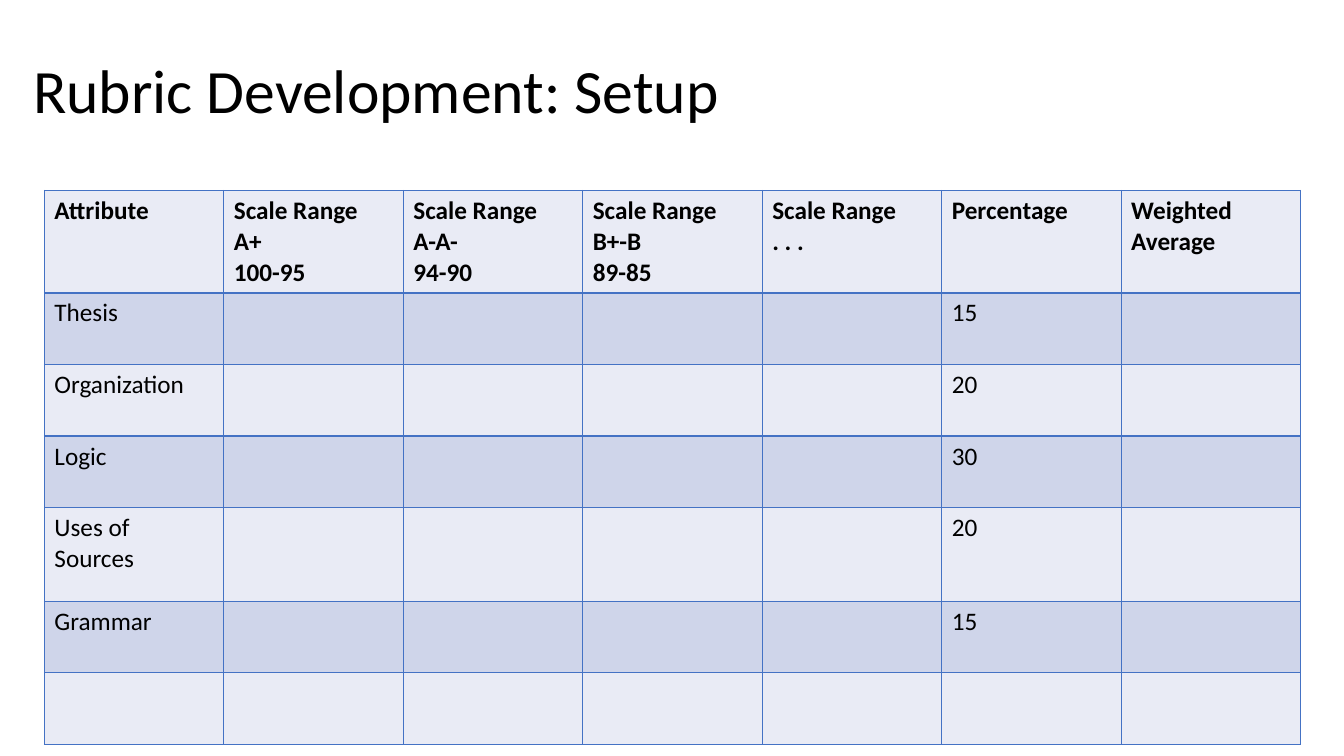
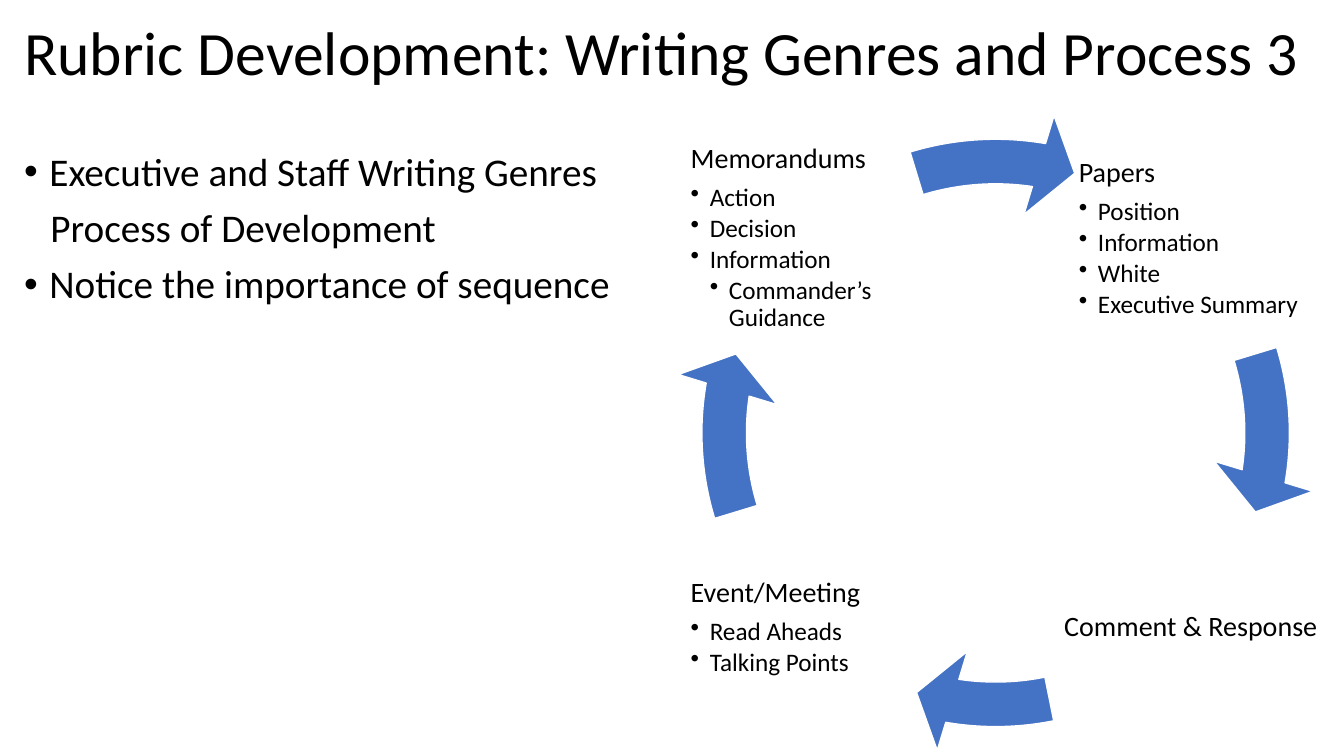
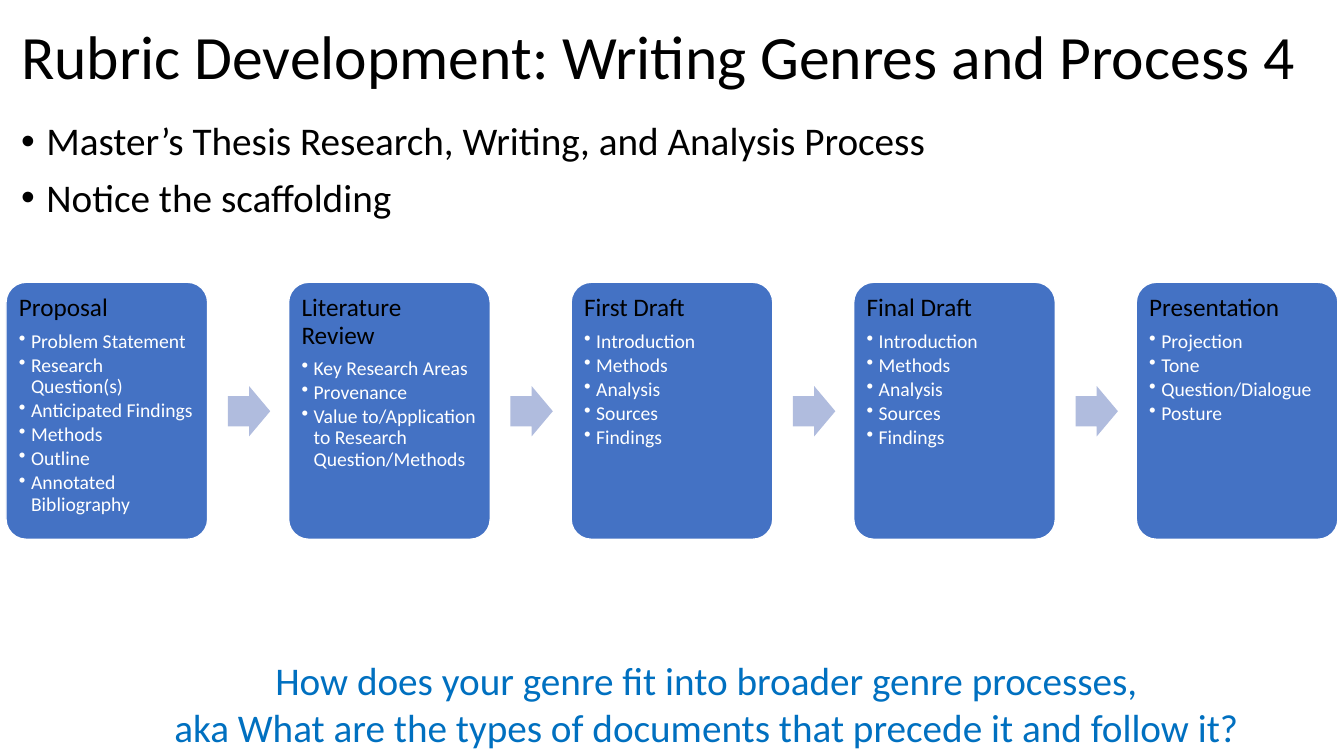
from lxml import etree
from pptx import Presentation
from pptx.dml.color import RGBColor
from pptx.enum.shapes import MSO_SHAPE
from pptx.enum.text import MSO_ANCHOR, MSO_AUTO_SIZE, PP_ALIGN
from pptx.oxml.ns import qn
from pptx.util import Inches, Pt

FONT = "Calibri"
BLACK = RGBColor(0x00, 0x00, 0x00)
WHITE = RGBColor(0xFF, 0xFF, 0xFF)
BLUE = RGBColor(0x44, 0x72, 0xC4)
PALE_BLUE = RGBColor(0xB0, 0xBC, 0xDE)
QUESTION_BLUE = RGBColor(0x00, 0x70, 0xC0)
ROW_FILLS = (RGBColor(0xE9, 0xEB, 0xF5), RGBColor(0xCF, 0xD5, 0xEA))

LEFT, CENTER = PP_ALIGN.LEFT, PP_ALIGN.CENTER
TOP, MIDDLE = MSO_ANCHOR.TOP, MSO_ANCHOR.MIDDLE
NO_AUTOFIT = MSO_AUTO_SIZE.NONE
ROUNDED = MSO_SHAPE.ROUNDED_RECTANGLE
RIGHT_ARROW = MSO_SHAPE.RIGHT_ARROW
CIRCULAR_ARROW = MSO_SHAPE.CIRCULAR_ARROW

TITLE_ONLY, TITLE_AND_BODY = 5, 1

COLUMN_WIDTH = 1.78
ROW_HEIGHTS = (0.93, 0.71, 0.71, 0.71, 0.93, 0.71, 0.71)
RUBRIC_HEADINGS = (
    "Attribute", "Scale Range\nA+\n100-95", "Scale Range\nA-A-\n94-90",
    "Scale Range B+-B\n89-85", "Scale Range\n. . .", "Percentage",
    "Weighted\nAverage",
)
ATTRIBUTES = (("Thesis", "15"), ("Organization", "20"), ("Logic", "30"),
              ("Uses of Sources", "20"), ("Grammar", "15"), ("", ""))

# Start angles of the cycle arrows, clockwise from the right-hand one
CYCLE_STARTS = (205.84, 47.16, 97.84, 151.84)
DRAFT_PARTS = ("Introduction", "Methods", "Analysis", "Sources", "Findings")
THESIS_STEPS = (
    ("Proposal", ("Problem Statement", "Research Question(s)",
                  "Anticipated Findings", "Methods", "Outline",
                  "Annotated Bibliography")),
    ("Literature Review", ("Key Research Areas", "Provenance",
                           "Value to/Application to Research Question/Methods")),
    ("First Draft", DRAFT_PARTS),
    ("Final Draft", DRAFT_PARTS),
    ("Presentation", ("Projection", "Tone", "Question/Dialogue", "Posture")),
)


def add_text(frame, text, size=18, color=BLACK, bold=False, align=LEFT,
             spacing=0.9, before=0, after=0, bullet=False, margin=0, indent=0):
    """Write one paragraph, filling the frame's first one if it is still empty."""
    para = frame.paragraphs[-1]
    if para.runs:
        para = frame.add_paragraph()
    para.alignment = align
    para.line_spacing = spacing
    para.space_before, para.space_after = Pt(before), Pt(after)
    props = para._p.get_or_add_pPr()
    props.set("marL", str(Inches(margin)))
    props.set("indent", str(Inches(indent)))
    if bullet:
        etree.SubElement(props, qn("a:buChar")).set("char", "•")
    else:
        etree.SubElement(props, qn("a:buNone"))
    span = para.add_run()
    span.text = text
    font = span.font
    font.name, font.size, font.bold = FONT, Pt(size), bold
    font.color.rgb = color


def setup_frame(frame, anchor=TOP, inset=None):
    frame.word_wrap = True
    frame.auto_size = NO_AUTOFIT
    frame.vertical_anchor = anchor
    if inset is not None:
        frame.margin_left = frame.margin_right = Inches(inset)
        frame.margin_top = frame.margin_bottom = Inches(inset)


def place(shape, left, top, width, height):
    shape.left, shape.top = Inches(left), Inches(top)
    shape.width, shape.height = Inches(width), Inches(height)


def add_page(deck, layout, title, *title_area):
    page = deck.slides.add_slide(deck.slide_layouts[layout])
    place(page.shapes.title, *title_area)
    frame = page.shapes.title.text_frame
    setup_frame(frame, MIDDLE)
    add_text(frame, title, size=44)
    return page


def fill_body(page, left, top):
    """Place the body placeholder and return its text frame."""
    body = page.placeholders[1]
    place(body, left, top, 11.5, 4.76)
    setup_frame(body.text_frame)
    return body.text_frame


def add_point(frame, text, bullet=True, margin=0.25, indent=-0.25):
    add_text(frame, text, size=28, before=10, bullet=bullet,
             margin=margin, indent=indent)


def add_box(page, left, top, width, height, anchor=TOP, inset=None):
    box = page.shapes.add_textbox(Inches(left), Inches(top),
                                  Inches(width), Inches(height))
    setup_frame(box.text_frame, anchor, inset)
    return box.text_frame


def add_shape(page, kind, left, top, width, height, fill, adjust, line=None):
    shape = page.shapes.add_shape(kind, Inches(left), Inches(top),
                                  Inches(width), Inches(height))
    shape.shadow.inherit = False
    shape.fill.solid()
    shape.fill.fore_color.rgb = fill
    for index, value in enumerate(adjust):
        shape.adjustments[index] = value
    if line is None:
        shape.line.fill.background()
    else:
        shape.line.color.rgb = line
        shape.line.width = Pt(1)
    return shape


def add_headed_list(frame, heading, items, nested=(), heading_size=20,
                    item_size=18, color=BLACK, step=0.19):
    """Write a heading, its bullets and, one level deeper, the nested bullets."""
    add_text(frame, heading, size=heading_size, after=0.35 * heading_size)
    for level, entries in enumerate((items, nested), start=1):
        for entry in entries:
            add_text(frame, entry, size=item_size, color=color, bullet=True,
                     after=0.15 * item_size, margin=level * step, indent=-step)


def add_borders(cell, color):
    props = cell._tc.get_or_add_tcPr()
    for side in ("lnL", "lnR", "lnT", "lnB"):
        line = etree.SubElement(props, qn(f"a:{side}"), w=str(Pt(1)))
        fill = etree.SubElement(line, qn("a:solidFill"))
        etree.SubElement(fill, qn("a:srgbClr"), val=str(color))


def add_rubric(page, left, top):
    rows = [RUBRIC_HEADINGS]
    rows += [(name, "", "", "", "", share, "") for name, share in ATTRIBUTES]
    columns = len(RUBRIC_HEADINGS)
    table = page.shapes.add_table(
        len(rows), columns, Inches(left), Inches(top),
        Inches(COLUMN_WIDTH * columns), Inches(sum(ROW_HEIGHTS))).table
    for column in table.columns:
        column.width = Inches(COLUMN_WIDTH)
    for index, texts in enumerate(rows):
        table.rows[index].height = Inches(ROW_HEIGHTS[index])
        for cell, text in zip(table.rows[index].cells, texts):
            add_borders(cell, BLUE)
            cell.fill.solid()
            cell.fill.fore_color.rgb = ROW_FILLS[index % 2]
            for line in text.split("\n") if text else ():
                add_text(cell.text_frame, line, bold=index == 0, spacing=1)


def build_setup(deck):
    page = add_page(deck, TITLE_ONLY, "Rubric Development: Setup",
                    0.23, 0.2, 11.5, 1.45)
    add_rubric(page, 0.44, 1.89)


def build_staff_cycle(deck):
    page = add_page(deck, TITLE_AND_BODY,
                    "Rubric Development: Writing Genres and Process 3",
                    0.14, 0.12, 12.98, 0.87)
    body = fill_body(page, 0.14, 1.46)
    add_point(body, "Executive and Staff Writing Genres")
    add_point(body, "Process of Development", bullet=False, margin=0, indent=0.26)
    add_point(body, "Notice the importance of sequence")

    for turn, start in enumerate(CYCLE_STARTS):
        add_shape(page, CIRCULAR_ARROW, 6.67, 1.09, 6.41, 6.41, BLUE,
                  (0.069, 4.65, 5.51 + 54 * turn, start, 0.08), line=WHITE)

    left, right, upper, lower, side = 6.82, 10.67, 1.23, 5.09, 2.27
    stages = (
        (right, upper, "Papers",
         ("Position", "Information", "White", "Executive Summary"), ()),
        (left, lower, "Event/Meeting", ("Read Aheads", "Talking Points"), ()),
        (left, upper, "Memorandums", ("Action", "Decision", "Information"),
         ("Commander’s Guidance",)),
    )
    for x, y, heading, items, nested in stages:
        frame = add_box(page, x, y, side, side, MIDDLE, 0.03)
        add_headed_list(frame, heading, items, nested)
    response = add_box(page, 10.42, lower, 2.78, side, MIDDLE, 0.03)
    add_text(response, "Comment & Response", size=20, align=CENTER, after=7)


def build_thesis_steps(deck):
    page = add_page(deck, TITLE_AND_BODY,
                    "Rubric Development: Writing Genres and Process 4",
                    0.11, 0.16, 12.98, 0.87)
    body = fill_body(page, 0.11, 1.16)
    add_point(body, "Master’s Thesis Research, Writing, and Analysis Process")
    add_point(body, "Notice the scaffolding")

    first, last = 0.06, 11.27
    pitch = (last - first) / (len(THESIS_STEPS) - 1)
    for index, (heading, items) in enumerate(THESIS_STEPS):
        left = first + index * pitch
        card = add_shape(page, ROUNDED, left, 2.8, 2, 2.55, BLUE, (0.1,), line=WHITE)
        setup_frame(card.text_frame, TOP, 0.07)
        add_headed_list(card.text_frame, heading, items, heading_size=18,
                        item_size=14, color=WHITE, step=0.12)
        if index < len(THESIS_STEPS) - 1:
            add_shape(page, RIGHT_ARROW, left + 2.2, 3.83, 0.42, 0.5,
                      PALE_BLUE, (0.6, 0.5))

    question = add_box(page, 1.53, 6.46, 10.95, 1.04)
    for line in ("How does your genre fit into broader genre processes,",
                 "aka What are the types of documents that precede it and follow it?"):
        add_text(question, line, size=28, color=QUESTION_BLUE, align=CENTER, spacing=1)


def main():
    deck = Presentation()
    deck.slide_width, deck.slide_height = Inches(13.33), Inches(7.5)
    build_setup(deck)
    build_staff_cycle(deck)
    build_thesis_steps(deck)
    deck.save("out.pptx")


if __name__ == "__main__":
    main()
